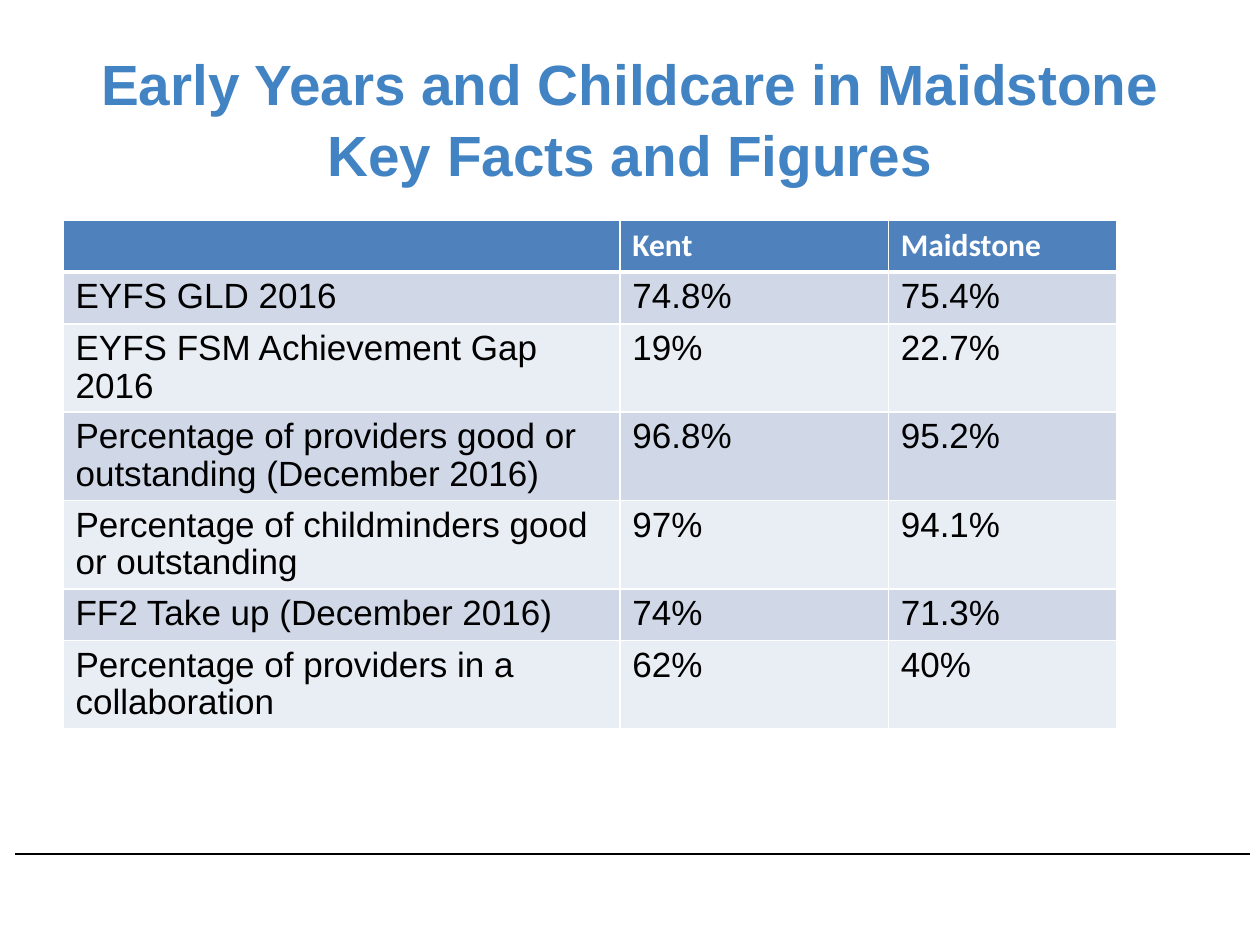
from lxml import etree
from pptx import Presentation
from pptx.dml.color import RGBColor
from pptx.enum.shapes import MSO_CONNECTOR
from pptx.enum.text import MSO_ANCHOR, PP_ALIGN
from pptx.oxml.ns import qn
from pptx.util import Inches, Pt

LINE = MSO_CONNECTOR.STRAIGHT
MIDDLE = MSO_ANCHOR.MIDDLE
CENTER = PP_ALIGN.CENTER

BLUE = RGBColor(0x42, 0x83, 0xC4)
HEAD = RGBColor(0x4F, 0x81, 0xBD)
DARK = RGBColor(0xD0, 0xD8, 0xE8)
PALE = RGBColor(0xE9, 0xED, 0xF4)
WHITE = RGBColor(0xFF, 0xFF, 0xFF)
BLACK = RGBColor(0, 0, 0)

TITLE = {"name": "Arial", "size": Pt(32.4), "bold": True}
LABEL = {"name": "Calibri", "size": Pt(18), "bold": True}
BODY = {"name": "Arial", "size": Pt(20), "bold": False}

COLS = (4.42, 2.13, 1.81)
ROWS = [
    ("", "Kent", "Maidstone"),
    ("EYFS GLD 2016", "74.8%", "75.4%"),
    ("EYFS FSM Achievement Gap 2016", "19%", "22.7%"),
    ("Percentage of providers good or outstanding (December 2016)", "96.8%", "95.2%"),
    ("Percentage of childminders good or outstanding", "97%", "94.1%"),
    ("FF2 Take up (December 2016)", "74%", "71.3%"),
    ("Percentage of providers in a collaboration", "62%", "40%"),
]


class Deck:
    def __init__(self):
        self.deck = Presentation()
        self.deck.slide_width = Inches(10)
        self.deck.slide_height = Inches(7.5)
        self.slide = self.deck.slides.add_slide(self.deck.slide_layouts[5])

    def style(self, para, look, color):
        for key, value in look.items():
            setattr(para.font, key, value)
        para.font.color.rgb = color

    def title(self, text, box):
        shape = self.slide.shapes.title
        for key, value in zip(("left", "top", "width", "height"), box):
            setattr(shape, key, Inches(value))
        frame = shape.text_frame
        frame.text = text
        frame.word_wrap = True
        frame.vertical_anchor = MIDDLE
        para = frame.paragraphs[0]
        para.alignment = CENTER
        para.line_spacing = 1.05
        self.style(para, TITLE, BLUE)

    def rule(self, left, right, top):
        line = self.slide.shapes.add_connector(
            LINE, Inches(left), Inches(top), Inches(right), Inches(top))
        line.line.color.rgb = BLACK
        line.line.width = Pt(1)
        etree.SubElement(line._element.spPr, qn("a:effectLst"))

    def edge(self, cell, side, width):
        props = cell._tc.get_or_add_tcPr()
        line = etree.SubElement(props, qn("a:ln" + side), w=str(Pt(width)))
        fill = etree.SubElement(line, qn("a:solidFill"))
        etree.SubElement(fill, qn("a:srgbClr"), val=str(WHITE))

    def cell(self, cell, text, look, color, fill, sides):
        for side, width in sides.items():
            self.edge(cell, side, width)
        cell.fill.solid()
        cell.fill.fore_color.rgb = fill
        cell.text = text
        para = cell.text_frame.paragraphs[0]
        para.line_spacing = 0.97
        self.style(para, look, color)

    def table(self, rows, cols, left, top, height):
        grid = self.slide.shapes.add_table(
            len(rows), len(cols), Inches(left), Inches(top),
            Inches(sum(cols)), Inches(height * len(rows))).table
        for col, width in zip(grid.columns, cols):
            col.width = Inches(width)
        for i, row in enumerate(rows):
            grid.rows[i].height = Inches(height)
            look, color = (BODY, BLACK) if i else (LABEL, WHITE)
            fill = (DARK if i % 2 else PALE) if i else HEAD
            sides = {"L": 1, "R": 1, "T": 3 if i == 1 else 1, "B": 1 if i else 3}
            for j, text in enumerate(row):
                self.cell(grid.cell(i, j), text, look, color, fill, sides)


def main():
    deck = Deck()
    deck.rule(0.12, 9.92, 6.78)
    deck.title("Early Years and Childcare in Maidstone\vKey Facts and Figures",
               (0.5, 0.3, 9, 1.25))
    deck.table(ROWS, COLS, 0.5, 1.75, 0.41)
    deck.deck.save("out.pptx")


if __name__ == "__main__":
    main()
